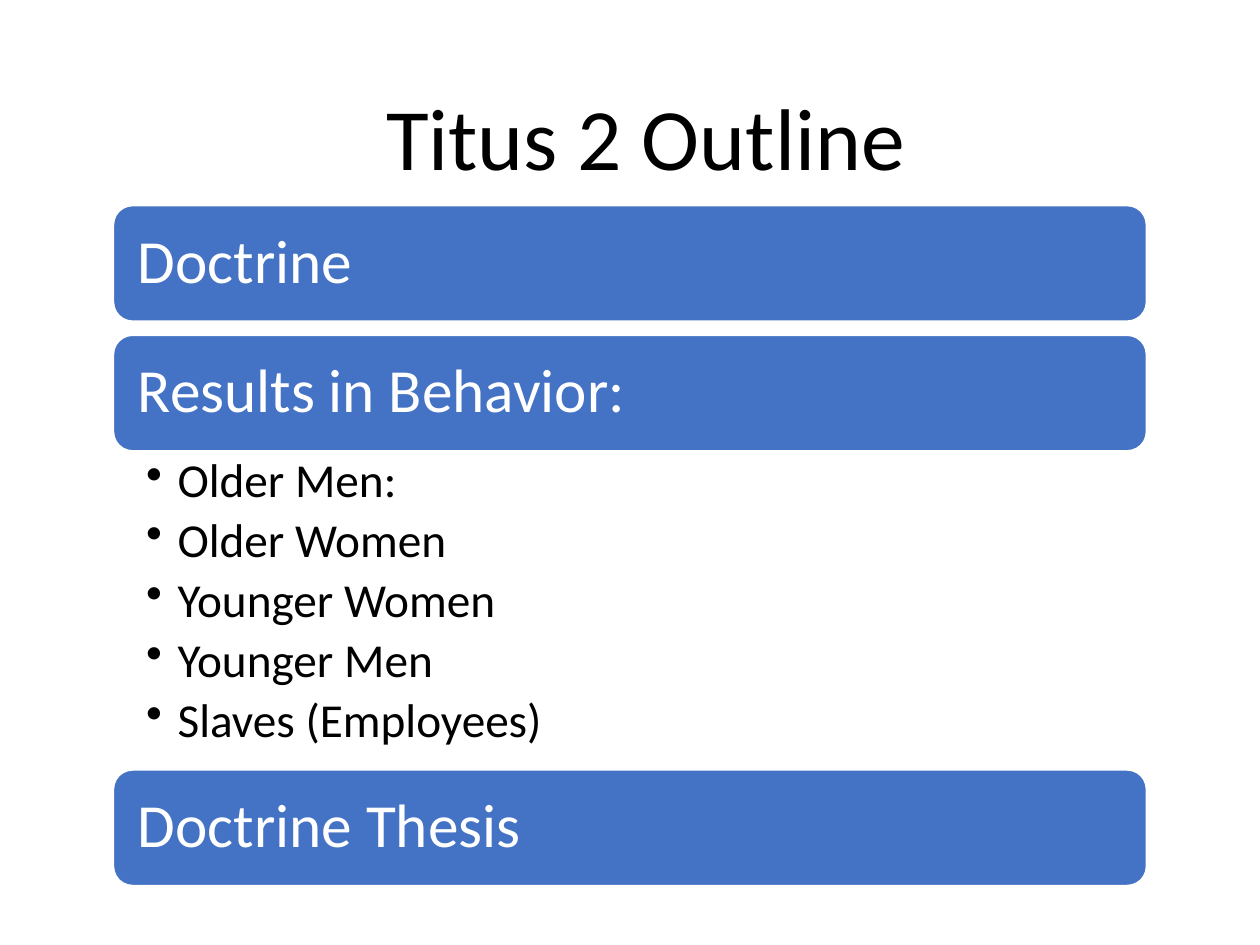
from dataclasses import dataclass

import lxml.etree
import pptx
import pptx.dml.color
import pptx.enum.shapes
import pptx.enum.text
import pptx.oxml.ns
import pptx.util

Pt = pptx.util.Pt
COLORS = {"bar": "4472C4", "light": "FFFFFF", "dark": "000000"}
FONT = "Calibri"
LEFT, WIDTH = 64.8, 590.4
STACK_TOP, BAR_HEIGHT, BAR_GAP = 117.4, 66.2, 7.9
LIST_HEIGHT = 182.2
BULLET_INDENT = 18


@dataclass(frozen=True)
class Section:
    heading: str
    points: tuple[str, ...] = ()


SECTIONS = (
    Section("Doctrine"),
    Section(
        "Results in Behavior:",
        ("Older Men:", "Older Women", "Younger Women", "Younger Men",
         "Slaves (Employees)"),
    ),
    Section("Doctrine Thesis"),
)


def rgb(name: str) -> pptx.dml.color.RGBColor:
    return pptx.dml.color.RGBColor.from_string(COLORS[name])


def set_frame(frame, horizontal: float, vertical: float, anchor) -> None:
    frame.word_wrap = True
    frame.margin_left = frame.margin_right = Pt(horizontal)
    frame.margin_top = frame.margin_bottom = Pt(vertical)
    frame.vertical_anchor = anchor


def add_run(paragraph, text: str, size: float, color: str) -> None:
    run = paragraph.add_run()
    run.text = text
    run.font.name = FONT
    run.font.size = Pt(size)
    run.font.color.rgb = rgb(color)


def add_bullet(paragraph) -> None:
    """Give the paragraph a round bullet with a hanging indent."""
    properties = paragraph._p.get_or_add_pPr()
    properties.set("marL", str(Pt(BULLET_INDENT)))
    properties.set("indent", str(-Pt(BULLET_INDENT)))
    bullet = lxml.etree.SubElement(properties, pptx.oxml.ns.qn("a:buChar"))
    bullet.set("char", "•")


def add_title(slide, text: str) -> None:
    title = slide.shapes.add_textbox(Pt(82.8), Pt(43.9), Pt(572.4), Pt(67.7))
    set_frame(title.text_frame, 7.2, 3.6, pptx.enum.text.MSO_ANCHOR.TOP)
    paragraph = title.text_frame.paragraphs[0]
    paragraph.alignment = pptx.enum.text.PP_ALIGN.CENTER
    add_run(paragraph, text, 50, "dark")


def add_bar(slide, heading: str, top: float) -> None:
    bar = slide.shapes.add_shape(
        pptx.enum.shapes.MSO_SHAPE.ROUNDED_RECTANGLE,
        Pt(LEFT), Pt(top), Pt(WIDTH), Pt(BAR_HEIGHT),
    )
    bar.shadow.inherit = False
    bar.fill.solid()
    bar.fill.fore_color.rgb = rgb("bar")
    bar.line.color.rgb = rgb("light")
    bar.line.width = Pt(1)
    set_frame(bar.text_frame, 10.8, 10.8, pptx.enum.text.MSO_ANCHOR.MIDDLE)
    paragraph = bar.text_frame.paragraphs[0]
    paragraph.alignment = pptx.enum.text.PP_ALIGN.LEFT
    paragraph.line_spacing = 0.9
    add_run(paragraph, heading, 35, "light")


def add_points(slide, points: tuple[str, ...], top: float) -> None:
    box = slide.shapes.add_textbox(Pt(LEFT), Pt(top), Pt(WIDTH), Pt(LIST_HEIGHT))
    frame = box.text_frame
    set_frame(frame, 18.7, 3.6, pptx.enum.text.MSO_ANCHOR.TOP)
    for index, point in enumerate(points):
        paragraph = frame.add_paragraph() if index else frame.paragraphs[0]
        paragraph.line_spacing = 0.9
        paragraph.space_after = Pt(5)
        add_bullet(paragraph)
        add_run(paragraph, point, 27, "dark")


def main() -> None:
    presentation = pptx.Presentation()
    presentation.slide_width, presentation.slide_height = Pt(720), Pt(540)
    slide = presentation.slides.add_slide(presentation.slide_layouts[6])
    add_title(slide, "Titus 2 Outline")
    top = STACK_TOP
    for section in SECTIONS:
        add_bar(slide, section.heading, top)
        top += BAR_HEIGHT
        if section.points:
            add_points(slide, section.points, top)
            top += LIST_HEIGHT
        else:
            top += BAR_GAP
    presentation.save("out.pptx")


if __name__ == "__main__":
    main()
